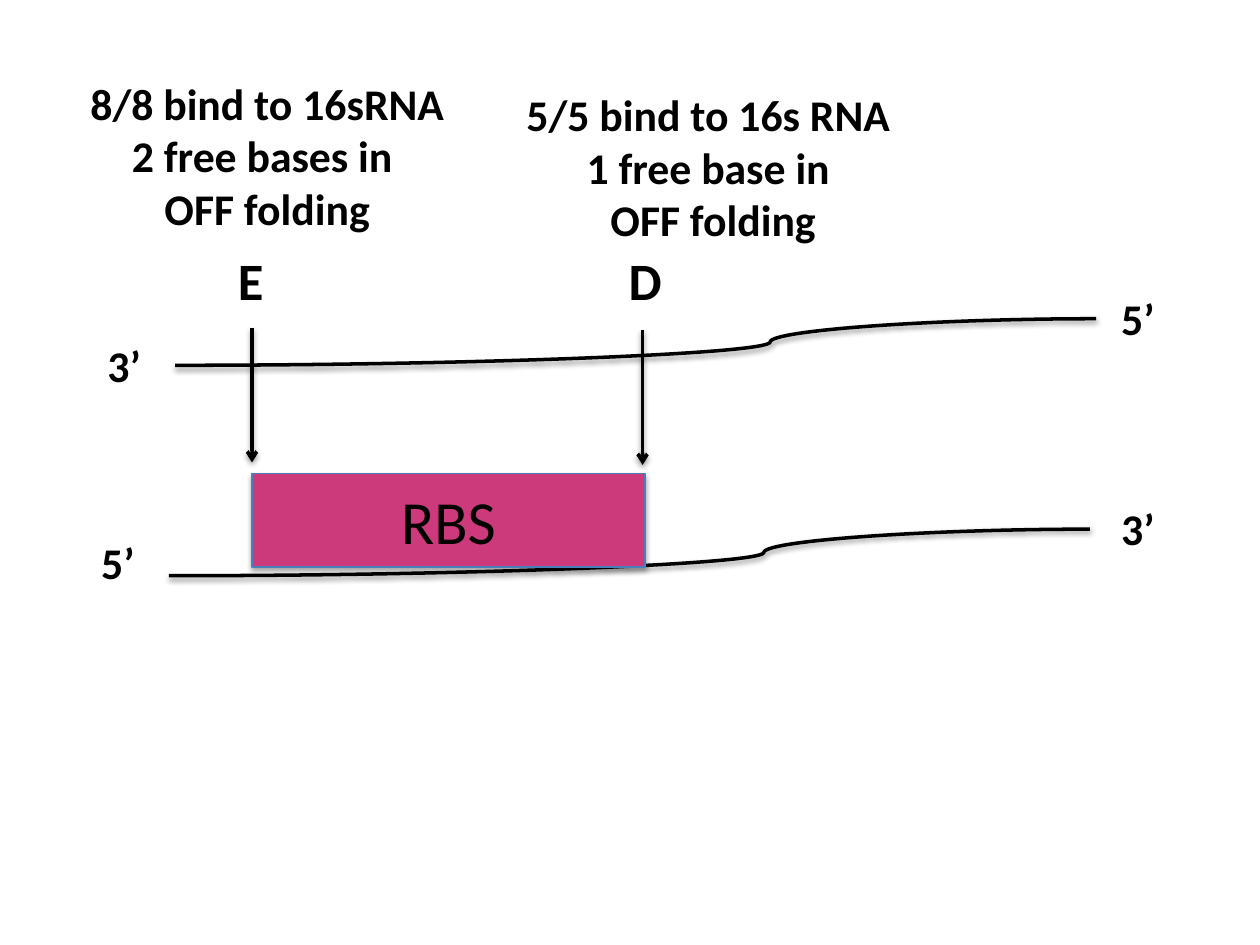
from lxml import etree
from pptx import Presentation
from pptx.dml.color import RGBColor
from pptx.enum.shapes import MSO_CONNECTOR, MSO_SHAPE
from pptx.enum.text import MSO_ANCHOR, MSO_AUTO_SIZE, PP_ALIGN
from pptx.oxml.ns import qn
from pptx.util import Inches, Pt

CURVE, LINE = MSO_CONNECTOR.CURVE, MSO_CONNECTOR.STRAIGHT
RECT = MSO_SHAPE.RECTANGLE
LEFT, CENTER = PP_ALIGN.LEFT, PP_ALIGN.CENTER
MIDDLE = MSO_ANCHOR.MIDDLE
GROW = MSO_AUTO_SIZE.SHAPE_TO_FIT_TEXT
COLS, ROWS = 100, 75
CELL = Inches(10) / COLS
BLACK, PINK, BLUE = "000000", "CD3A7B", "4B7EBC"


def grid(*cells):
    """Turn counts of grid cells into slide lengths."""
    return [round(n * CELL) for n in cells]


def color(code):
    """Turn a hex string into a colour."""
    return RGBColor.from_string(code)


def write(frame, text, size=25, bold=True, align=LEFT):
    """Fill a text frame, one paragraph for each line."""
    for i, line in enumerate(text.split("\n")):
        para = frame.paragraphs[0] if i == 0 else frame.add_paragraph()
        para.alignment = align
        run = para.add_run()
        run.text = line
        font = run.font
        font.name, font.size, font.bold = "Calibri", Pt(size), bold
        font.color.rgb = color(BLACK)


def label(slide, box, text, wrap=False, **style):
    """Add a text box that grows with its text."""
    frame = slide.shapes.add_textbox(*grid(*box)).text_frame
    frame.word_wrap = wrap
    frame.auto_size = GROW
    write(frame, text, **style)


def stroke(slide, kind, start, end):
    """Add a black connector with the theme's soft shadow."""
    line = slide.shapes.add_connector(kind, *grid(*start, *end))
    line.line.color.rgb = color(BLACK)
    line.line.width = Pt(2)
    return line


def strand(slide, box, ends, drop):
    """Draw a curved strand and the labels of its two ends."""
    left, top, width, height = box
    right = left + width
    line = stroke(slide, CURVE, (left, top + height), (right, top))
    bend = line._element.spPr.find(qn("a:prstGeom")).find(qn("a:avLst"))
    etree.SubElement(bend, qn("a:gd"), name="adj1", fmla="val 64600")
    label(slide, (left - 6.35, top + drop, 4.7, 5.2), ends[0])
    label(slide, (88, top - 2.65, 4.7, 5.2), ends[1])


def region(slide, box, text):
    """Draw the coloured binding region."""
    rect = slide.shapes.add_shape(RECT, *grid(*box))
    rect.fill.solid()
    rect.fill.fore_color.rgb = color(PINK)
    rect.line.color.rgb = color(BLUE)
    rect.line.width = Pt(0.75)
    rect.text_frame.vertical_anchor = MIDDLE
    write(rect.text_frame, text, size=35, bold=False, align=CENTER)


def site(slide, x, top, letter, note, box):
    """Draw a site's arrow, its letter and the note above."""
    line = stroke(slide, LINE, (x, top), (x, top + 10.7))
    etree.SubElement(line.line._get_or_add_ln(), qn("a:tailEnd"), type="arrow")
    label(slide, (x - 2.1, 19.2, 16.4, 6.1), letter, wrap=True, size=30)
    label(slide, box, note, align=CENTER)


def main():
    """Build the slide and save it."""
    deck = Presentation()
    deck.slide_width, deck.slide_height = grid(COLS, ROWS)
    slide = deck.slides.add_slide(deck.slide_layouts[6])
    strand(slide, (13.4, 42, 73.1, 3.7), ("5’", "3’"), 0)
    strand(slide, (13.9, 25.3, 73.1, 3.7), ("3’", "5’"), 1.1)
    region(slide, (20, 37.6, 31.2, 7.4), "RBS")
    site(slide, 20, 26, "E",
         "8/8 bind to 16sRNA\n2 free bases in \nOFF folding",
         (6, 5.6, 30.4, 13.6))
    site(slide, 51, 26.2, "D",
         "5/5 bind to 16s RNA\n1 free base in\n OFF folding",
         (40.6, 6.5, 31.2, 13.6))
    deck.save("out.pptx")


if __name__ == "__main__":
    main()
